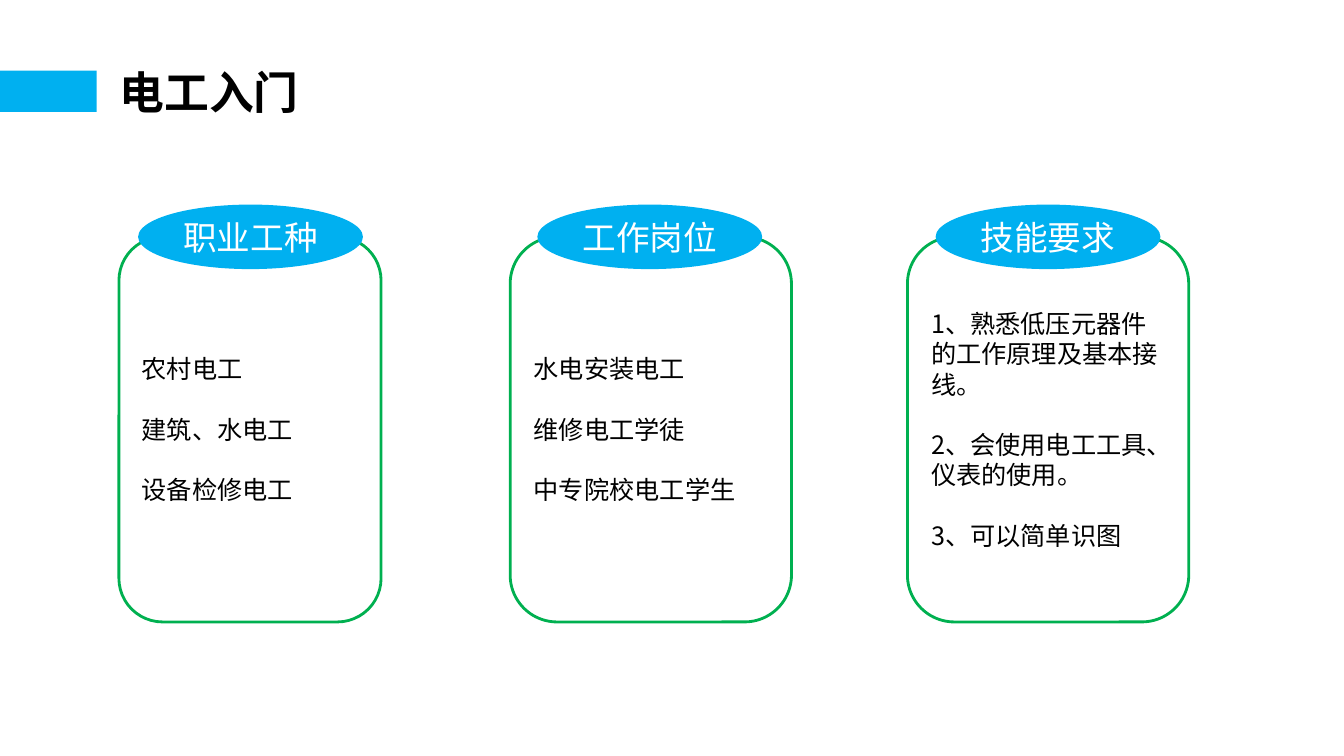
from dataclasses import dataclass

from lxml import etree
from pptx import Presentation
from pptx.dml.color import RGBColor
from pptx.enum.shapes import MSO_SHAPE
from pptx.enum.text import MSO_ANCHOR, MSO_AUTO_SIZE, PP_ALIGN
from pptx.oxml.ns import qn
from pptx.util import Inches, Pt

RECT, ROUND, OVAL = MSO_SHAPE.RECTANGLE, MSO_SHAPE.ROUNDED_RECTANGLE, MSO_SHAPE.OVAL
LEFT, CENTER = PP_ALIGN.LEFT, PP_ALIGN.CENTER
MIDDLE, FIXED = MSO_ANCHOR.MIDDLE, MSO_AUTO_SIZE.NONE

FONT = "Noto Sans CJK SC"
COLORS = {"blue": "00B0F0", "green": "00B050", "white": "FFFFFF", "black": "000000"}
PITCH = 21.6  # line height of panel text, points


@dataclass
class Panel:
    left: float
    width: float
    cap: float  # left edge of the oval heading
    head: str
    items: list[str]


PANELS = [
    Panel(1.18, 2.6, 1.37, "职业工种", ["农村电工", "建筑、水电工", "设备检修电工"]),
    Panel(5.06, 2.79, 5.33, "工作岗位", ["水电安装电工", "维修电工学徒", "中专院校电工学生"]),
    Panel(9, 2.79, 9.28, "技能要求", [
        "1、熟悉低压元器件的工作原理及基本接线。",
        "2、会使用电工工具、仪表的使用。",
        "3、可以简单识图",
    ]),
]


def tint(name: str) -> RGBColor:
    return RGBColor.from_string(COLORS[name])


def write(shape, lines: list[str], size: float, color: str = "black", bold: bool = False,
          align=CENTER, pitch: float | None = None, wrap: bool = True) -> None:
    """Fill a shape with paragraphs; a pitch also leaves one line between them."""
    frame = shape.text_frame
    frame.auto_size = FIXED
    frame.word_wrap = wrap
    frame.vertical_anchor = MIDDLE
    frame.margin_left = frame.margin_right = Inches(0.1)
    frame.margin_top = frame.margin_bottom = 0
    for i, line in enumerate(lines):
        para = frame.paragraphs[0] if i == 0 else frame.add_paragraph()
        para.alignment = align
        para.space_before = Pt(pitch if pitch and i else 0)
        para.line_spacing = Pt(pitch) if pitch else 1.0
        run = para.add_run()
        run.text = line
        font = run.font
        font.size, font.bold, font.name = Pt(size), bold, FONT
        font.color.rgb = tint(color)
        east = etree.SubElement(font._element, qn("a:ea"))
        east.set("typeface", FONT)


def draw(slide, kind, left: float, top: float, width: float, height: float,
         fill: str, line: str | None = None):
    shape = slide.shapes.add_shape(
        kind, Inches(left), Inches(top), Inches(width), Inches(height))
    shape.shadow.inherit = False
    shape.fill.solid()
    shape.fill.fore_color.rgb = tint(fill)
    if line:
        shape.line.color.rgb = tint(line)
        shape.line.width = Pt(2)
    else:
        shape.line.fill.background()
    return shape


def add_panel(slide, panel: Panel) -> None:
    body = draw(slide, ROUND, panel.left, 2.35, panel.width, 3.82, "white", "green")
    write(body, panel.items, 18, align=LEFT, pitch=PITCH)
    head = draw(slide, OVAL, panel.cap, 2.03, 2.23, 0.64, "blue")
    write(head, [panel.head], 24, "white", wrap=False)


def main() -> None:
    deck = Presentation()
    deck.slide_width, deck.slide_height = Inches(13.33), Inches(7.5)
    slide = deck.slides.add_slide(deck.slide_layouts[5])

    # Title and its accent bar
    title = slide.shapes.title
    title.left, title.top = Inches(0.96), Inches(0.59)
    title.width, title.height = Inches(2.23), Inches(0.64)
    write(title, ["电工入门"], 32, bold=True)
    draw(slide, RECT, 0, 0.7, 0.96, 0.41, "blue")

    # Three panels with oval headings
    for panel in PANELS:
        add_panel(slide, panel)

    deck.save("out.pptx")


if __name__ == "__main__":
    main()
